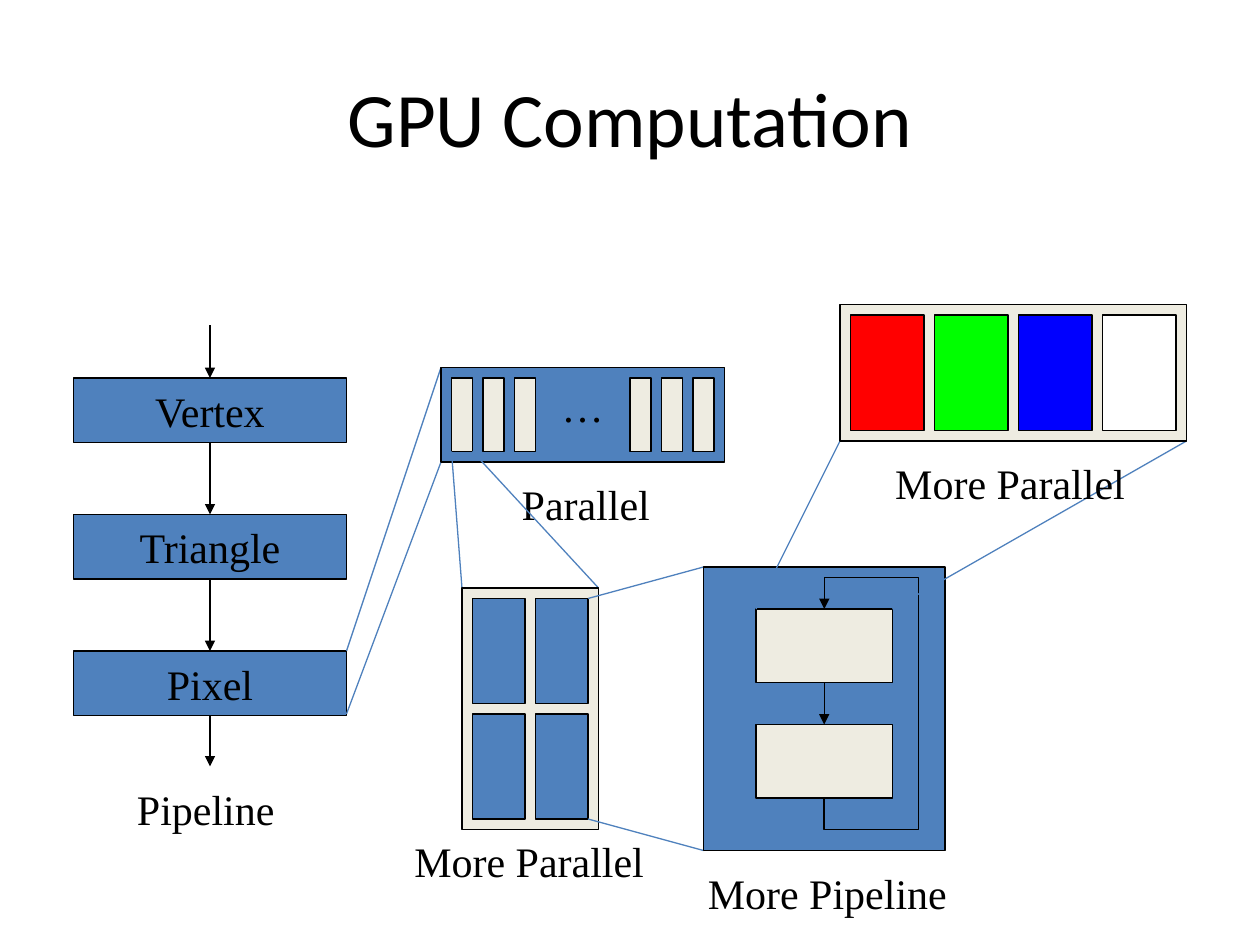
import pptx
import pptx.util
import pptx.dml.color
import pptx.enum.shapes
import pptx.enum.text
import pptx.oxml
import pptx.oxml.ns

RGB = pptx.dml.color.RGBColor
BLACK = RGB(0x00, 0x00, 0x00)
WHITE = RGB(0xFF, 0xFF, 0xFF)
STEEL = RGB(0x4F, 0x81, 0xBD)
CREAM = RGB(0xEE, 0xEC, 0xE1)
RED = RGB(0xFF, 0x00, 0x00)
GREEN = RGB(0x00, 0xFF, 0x00)
BLUE = RGB(0x00, 0x00, 0xFF)

KIND = pptx.enum.shapes.MSO_CONNECTOR
ANCHOR = pptx.enum.text.MSO_ANCHOR
QN = pptx.oxml.ns.qn
NS = pptx.oxml.ns.nsdecls("a")


def unit(count):
    """Length of a number of grid cells; twelve cells make an inch."""
    return pptx.util.Inches(count / 12)


class Board:
    font, size = "Times New Roman", 24

    def __init__(self, slide):
        self.slide = slide
        self.shapes = slide.shapes

    def put(self, frame, text, font=None, size=None):
        frame.vertical_anchor = ANCHOR.MIDDLE
        para = frame.paragraphs[0]
        para.alignment = pptx.enum.text.PP_ALIGN.CENTER
        run = para.add_run()
        run.text = text
        run.font.name = font or self.font
        run.font.size = pptx.util.Pt(size or self.size)
        run.font.color.rgb = BLACK

    def title(self, text):
        head = self.shapes.title
        head.left, head.top = unit(6), unit(3.6)
        head.width, head.height = unit(108), unit(15)
        self.put(head.text_frame, text, "Calibri", 44)

    def box(self, col, row, wide, high, fill, text=None, edge=0.75):
        rect = self.shapes.add_shape(
            pptx.enum.shapes.MSO_SHAPE.RECTANGLE,
            unit(col), unit(row), unit(wide), unit(high))
        rect.shadow.inherit = False
        rect.fill.solid()
        rect.fill.fore_color.rgb = fill
        rect.line.color.rgb = BLACK
        rect.line.width = pptx.util.Pt(edge)
        if text:
            self.put(rect.text_frame, text)
        return rect

    def label(self, text, mid, row, wide, wrap=False):
        area = self.shapes.add_textbox(
            unit(mid - wide / 2), unit(row), unit(wide), unit(6))
        area.text_frame.word_wrap = wrap
        area.text_frame.auto_size = pptx.enum.text.MSO_AUTO_SIZE.SHAPE_TO_FIT_TEXT
        self.put(area.text_frame, text)

    def line(self, start, end, color=STEEL, arrow=False, kind=KIND.STRAIGHT):
        link = self.shapes.add_connector(
            kind, *(unit(n) for n in (*start, *end)))
        link.line.color.rgb = color
        link.line.width = pptx.util.Pt(0.75)
        props = link._element.spPr
        if arrow:
            props.find(QN("a:ln")).append(pptx.oxml.parse_xml(
                f'<a:tailEnd {NS} type="triangle"/>'))
        props.append(pptx.oxml.parse_xml(f"<a:effectLst {NS}/>"))
        return link

    def arrow(self, start, end, above=None, below=None):
        link = self.line(start, end, BLACK, True)
        if above:
            link.begin_connect(above, 2)
        if below:
            link.end_connect(below, 0)

    def loop(self, col, top, foot, side, lead):
        """Arrow from foot, out to a side column, and back to top."""
        span, mid = foot - top, (top + foot) / 2
        thin = 0.02
        link = self.line((col - span / 2, mid), (col + span / 2, mid + thin),
                         BLACK, True, KIND.ELBOW)
        props = link._element.spPr
        frame = props.find(QN("a:xfrm"))
        for key, value in (("rot", "5400000"), ("flipH", "1"), ("flipV", "1")):
            frame.set(key, value)
        shape = props.find(QN("a:prstGeom"))
        shape.set("prst", "bentConnector5")
        for old in list(shape):
            shape.remove(old)
        ratios = (-lead / span, (side - col) / thin, 1 + lead / span)
        guides = "".join(
            f'<a:gd name="adj{i}" fmla="val {round(ratio * 100000)}"/>'
            for i, ratio in enumerate(ratios, 1))
        shape.append(pptx.oxml.parse_xml(f"<a:avLst {NS}>{guides}</a:avLst>"))


def main():
    deck = pptx.Presentation()
    deck.slide_width, deck.slide_height = unit(120), unit(90)
    board = Board(deck.slides.add_slide(deck.slide_layouts[5]))
    board.title("GPU Computation")

    # Pipeline of stages
    stages = [board.box(7, 36 + 13 * i, 26, 6.15, STEEL, name, 1)
              for i, name in enumerate(("Vertex", "Triangle", "Pixel"))]
    board.arrow((20, 31), (20, 36), below=stages[0])
    for above, below in zip(stages, stages[1:]):
        board.arrow((20, 42), (20, 49), above, below)
    board.arrow((20, 68), (20, 73), above=stages[2])
    board.label("Pipeline", 19.6, 74, 16.7)

    # Parallel row of units
    board.line((33, 62), (42, 35))
    board.line((33, 68), (42, 44))
    board.box(42, 35, 27, 9, STEEL)
    for first in (43, 60):
        for i in range(3):
            board.box(first + 3 * i, 36, 2, 7, CREAM)
    board.label("…", 55.5, 35.6, 27, True)
    board.label("Parallel", 55.8, 45, 19.7, True)

    # Two by two block
    board.line((43, 43), (44, 56))
    board.line((45, 43), (57, 56))
    board.box(44, 56, 13, 23, CREAM)
    for row in (57, 68):
        for col in (45, 51):
            board.box(col, row, 5, 10, STEEL)
    board.label("More Parallel", 50.4, 79, 25.9)

    # Inner pipeline with its loop
    board.line((56, 57), (67, 54))
    board.line((56, 78), (67, 81))
    board.box(67, 54, 23, 27, STEEL)
    upper, lower = [board.box(72, row, 13, 7, CREAM) for row in (58, 69)]
    board.arrow((78.5, 65), (78.5, 69), upper, lower)
    board.loop(78.5, 58, 76, 88, 3)
    board.label("More Pipeline", 78.8, 82, 26.9)

    # Colour channels
    board.line((72, 58), (80, 42))
    board.line((85, 58), (113, 42))
    board.box(80, 29, 33, 13, CREAM)
    for i, color in enumerate((RED, GREEN, BLUE, WHITE)):
        board.box(81 + 8 * i, 30, 7, 11, color)
    board.label("More Parallel", 96.2, 43, 25.9)

    deck.save("out.pptx")


if __name__ == "__main__":
    main()
